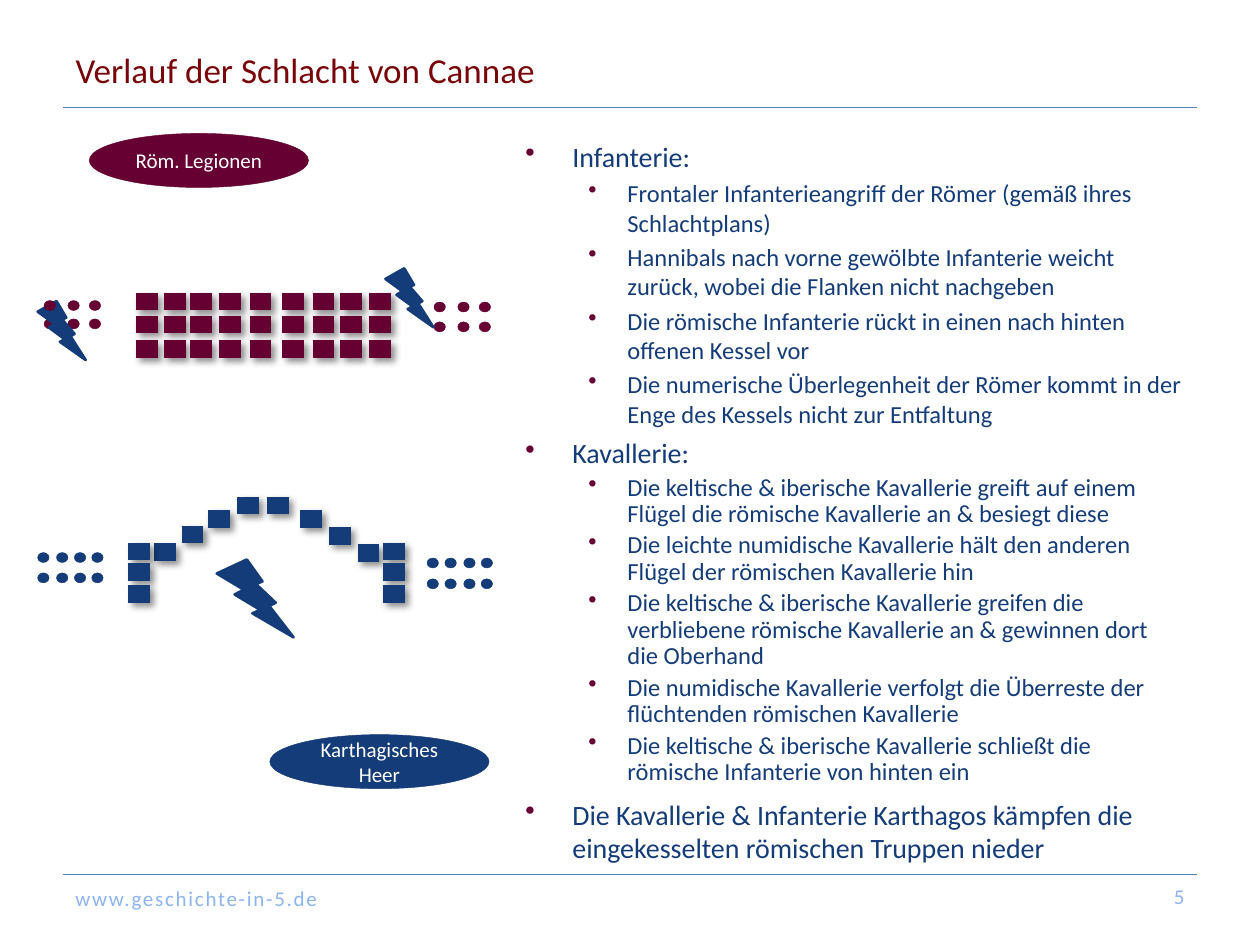
from dataclasses import dataclass
from itertools import product

from lxml.etree import SubElement
from pptx import Presentation
from pptx.dml.color import RGBColor as Color
from pptx.enum.shapes import MSO_CONNECTOR as Connector, MSO_SHAPE as Preset
from pptx.enum.text import MSO_ANCHOR as Anchor, MSO_AUTO_SIZE as AutoSize, PP_ALIGN as Align
from pptx.oxml.ns import qn
from pptx.util import Cm, Pt


@dataclass(frozen=True)
class Theme:
    font: str = "Calibri"
    rome: str = "660032"
    carthage: str = "143C78"
    title: str = "78050A"
    footer: str = "8CB4F0"
    rule: str = "4F81BD"
    white: str = "FFFFFF"
    shadow: str = "000000"
    title_size: int = 20
    level_sizes: tuple = (16, 14)
    small_size: int = 12


THEME = Theme()

TITLE = "Verlauf der Schlacht von Cannae"
FOOTER = "www.geschichte-in-5.de"
PAGE = "5"

SECTIONS = [
    (2.69, 6.5, 1.0, [
        (0, "Infanterie:"),
        (1, "Frontaler Infanterieangriff der Römer (gemäß ihres Schlachtplans)"),
        (1, "Hannibals nach vorne gewölbte Infanterie weicht zurück, wobei die Flanken nicht nachgeben"),
        (1, "Die römische Infanterie rückt in einen nach hinten offenen Kessel vor"),
        (1, "Die numerische Überlegenheit der Römer kommt in der Enge des Kessels nicht zur Entfaltung"),
    ]),
    (8.74, 7.54, 0.9, [
        (0, "Kavallerie:"),
        (1, "Die keltische & iberische Kavallerie greift auf einem Flügel die römische Kavallerie an & besiegt diese"),
        (1, "Die leichte numidische Kavallerie hält den anderen Flügel der römischen Kavallerie hin"),
        (1, "Die keltische & iberische Kavallerie greifen die verbliebene römische Kavallerie an & gewinnen dort die Oberhand"),
        (1, "Die numidische Kavallerie verfolgt die Überreste der flüchtenden römischen Kavallerie"),
        (1, "Die keltische & iberische Kavallerie schließt die römische Infanterie von hinten ein"),
    ]),
    (15.95, 2.1, 1.0, [
        (0, "Die Kavallerie & Infanterie Karthagos kämpfen die eingekesselten römischen Truppen nieder"),
    ]),
]
INDENTS = [(0.95, -0.95), (2.06, -0.79)]

LEGION_COLUMNS = [2.74, 3.3, 3.84, 4.42, 5.03, 5.69, 6.3, 6.86, 7.44]
LEGION_ROWS = [6.08, 6.54, 7.04]
FLANK_COLUMNS = [2.59, 7.72]
FLANK_ROWS = [11.12, 11.53, 11.97]
ARC = [(3.1, 11.13), (3.66, 10.77), (4.19, 10.46), (4.78, 10.19),
       (5.38, 10.19), (6.05, 10.46), (6.63, 10.8), (7.21, 11.15)]
BLOCK_LENGTH, BLOCK_THICKNESS = 0.44, 10

CAVALRY = [
    (THEME.rome, [0.89, 1.37, 1.8], 6.06, 6.43),
    (THEME.rome, [8.75, 9.23, 9.66], 6.09, 6.49),
    (THEME.carthage, [0.76, 1.14, 1.5, 1.85], 11.14, 11.55),
    (THEME.carthage, [8.61, 8.97, 9.35, 9.7], 11.25, 11.67),
]
RIDER = (0.23, 0.2)
BOLTS = [(0.76, 6.07, 0.97, 1.19), (7.77, 5.41, 0.97, 1.19), (4.37, 11.28, 1.55, 1.57)]
ARMIES = [
    ("Röm. Legionen", THEME.rome, (1.8, 2.69, 4.42, 1.09)),
    ("Karthagisches Heer", THEME.carthage, (5.44, 14.81, 4.42, 1.09)),
]


def write(paragraph, text, size=THEME.small_size, color=THEME.white, align=None, spacing=None):
    run = paragraph.add_run()
    run.text = text
    run.font.name = THEME.font
    run.font.size = Pt(size)
    run.font.color.rgb = Color.from_string(color)
    if align is not None:
        paragraph.alignment = align
    if spacing:
        run.font._element.set("spc", str(spacing * 100))


def add_box(slide, *place):
    frame = slide.shapes.add_textbox(*map(Cm, place)).text_frame
    frame.word_wrap = True
    return frame


def add_bullet(paragraph, level):
    left, hanging = INDENTS[level]
    properties = paragraph._p.get_or_add_pPr()
    properties.set("marL", str(Cm(left)))
    properties.set("indent", str(Cm(hanging)))
    color = SubElement(properties, qn("a:buClr"))
    SubElement(color, qn("a:srgbClr"), val=THEME.rome)
    SubElement(properties, qn("a:buChar"), char="•")


def add_section(slide, top, height, line_spacing, items):
    frame = add_box(slide, 10.34, top, 13.79, height)
    for index, (level, text) in enumerate(items):
        paragraph = frame.add_paragraph() if index else frame.paragraphs[0]
        size = THEME.level_sizes[level]
        paragraph.level = level
        add_bullet(paragraph, level)
        paragraph.line_spacing = line_spacing
        paragraph.space_before = Pt(0.2 * size if index else 0)
        write(paragraph, text, size=size, color=THEME.carthage)


def add_line(slide, left, top, length, color, width, shadow=False):
    ends = map(Cm, (left, top, left + length, top))
    line = slide.shapes.add_connector(Connector.STRAIGHT, *ends)
    line.line.color.rgb = Color.from_string(color)
    line.line.width = Pt(width)
    effects = SubElement(line._element.spPr, qn("a:effectLst"))
    if shadow:
        outer = SubElement(effects, qn("a:outerShdw"), blurRad=str(Pt(4)), dist=str(Pt(3)),
                           dir="2700000", algn="ctr", rotWithShape="0")
        tint = SubElement(outer, qn("a:srgbClr"), val=THEME.shadow)
        SubElement(tint, qn("a:alpha"), val="43000")


def add_figure(slide, preset, place, color, width=0.25):
    shape = slide.shapes.add_shape(preset, *map(Cm, place))
    shape.shadow.inherit = False
    shape.fill.solid()
    shape.fill.fore_color.rgb = Color.from_string(color)
    shape.line.color.rgb = Color.from_string(color)
    shape.line.width = Pt(width)
    return shape


def add_riders(slide, columns, top, color):
    for left in columns:
        add_figure(slide, Preset.OVAL, (left, top, *RIDER), color)


def add_frame(slide):
    for top in (2.17, 17.63):
        add_line(slide, 1.27, top, 22.86, THEME.rule, 0.25)
    title = slide.shapes.title
    title.left, title.top, title.width, title.height = map(Cm, (1.27, 0.76, 18.75, 1.3))
    title.text_frame.auto_size = AutoSize.NONE
    title.text_frame.vertical_anchor = Anchor.MIDDLE
    write(title.text_frame.paragraphs[0], TITLE, size=THEME.title_size,
          color=THEME.title, align=Align.LEFT)
    footer = add_box(slide, 1.27, 17.73, 14.3, 0.76)
    write(footer.paragraphs[0], FOOTER, color=THEME.footer, spacing=1)
    page = add_box(slide, 18.21, 17.65, 5.92, 0.84)
    page.vertical_anchor = Anchor.MIDDLE
    write(page.paragraphs[0], PAGE, color=THEME.footer, align=Align.RIGHT)


def add_battle(slide):
    infantry = [
        (THEME.rome, product(LEGION_COLUMNS, LEGION_ROWS)),
        (THEME.carthage, [*ARC, *product(FLANK_COLUMNS, FLANK_ROWS)]),
    ]
    for color, positions in infantry:
        for left, top in positions:
            add_line(slide, left, top, BLOCK_LENGTH, color, BLOCK_THICKNESS, shadow=True)
    for color, columns, _, lower in CAVALRY:
        add_riders(slide, columns, lower, color)
    for place in BOLTS:
        add_figure(slide, Preset.LIGHTNING_BOLT, place, THEME.carthage, width=1.5)
    for color, columns, upper, _ in CAVALRY:
        add_riders(slide, columns, upper, color)
    for name, color, place in ARMIES:
        frame = add_figure(slide, Preset.OVAL, place, color).text_frame
        frame.word_wrap = True
        frame.vertical_anchor = Anchor.MIDDLE
        write(frame.paragraphs[0], name, align=Align.CENTER)


def main():
    presentation = Presentation()
    presentation.slide_width, presentation.slide_height = Cm(25.4), Cm(19.05)
    slide = presentation.slides.add_slide(presentation.slide_layouts[5])
    add_frame(slide)
    for section in SECTIONS:
        add_section(slide, *section)
    add_battle(slide)
    presentation.save("out.pptx")


if __name__ == "__main__":
    main()
